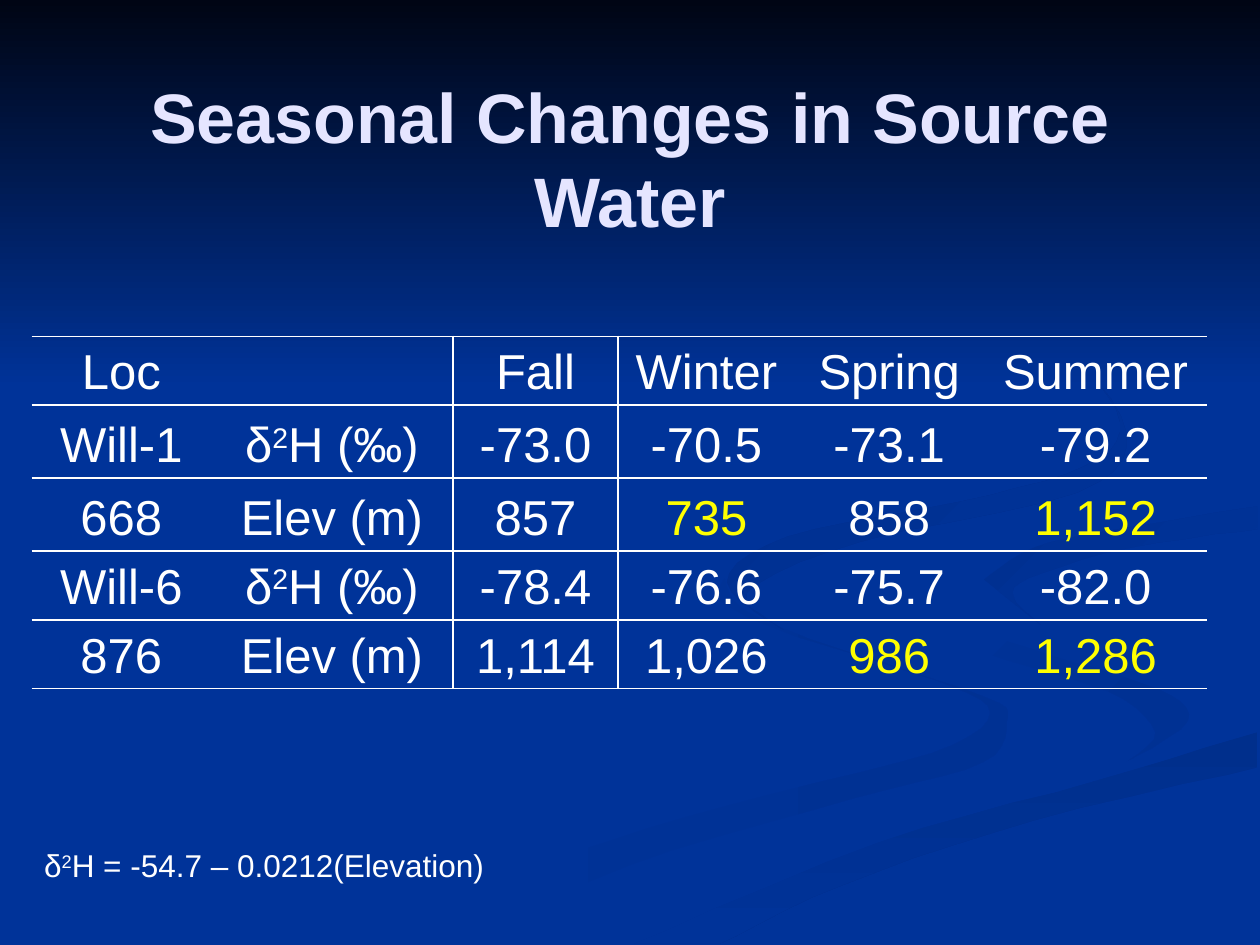
from lxml.etree import SubElement
from pptx import Presentation
from pptx.dml.color import RGBColor
from pptx.enum.shapes import MSO_SHAPE
from pptx.enum.text import MSO_ANCHOR, PP_ALIGN
from pptx.oxml import parse_xml
from pptx.oxml.ns import nsdecls, qn
from pptx.util import Cm, Pt

COLORS = {
    "navy": "003399", "night": "000514", "lavender": "E5E5FF",
    "white": "FFFFFF", "yellow": "FFFF00",
    "shade_soft": "003193", "shade_mid": "003091",
    "shade_deep": "002F8E", "shade_deepest": "002F8C",
}
FONT = "Arial"
NO_STYLE_NO_GRID = "{2D5ABB26-0587-4C30-8999-92F81FD0307C}"
RIBBON_UNIT = Cm(0.0254)
CURVE_STEPS = 5

COLUMN_WIDTHS = [3.61, 4.88, 3.33, 3.56, 3.81, 4.51]
ROW_HEIGHTS = [1.35, 1.47, 1.47, 1.36, 1.36]
ROWS = [
    ["Loc", "", "Fall", "Winter", "Spring", "Summer"],
    ["Will-1", "δ^2^H (‰)", "-73.0", "-70.5", "-73.1", "-79.2"],
    ["668", "Elev (m)", "857", "735", "858", "1,152"],
    ["Will-6", "δ^2^H (‰)", "-78.4", "-76.6", "-75.7", "-82.0"],
    ["876", "Elev (m)", "1,114", "1,026", "986", "1,286"],
]
HIGHLIGHTED = {"735", "1,152", "986", "1,286"}
RULED_BELOW = {0, 2, 4}
LABEL_COLUMNS = 2

# Banks that neighbouring ribbons share
BEND = [(724, 464), (745, 490), (831, 519), (920, 547), (943, 572)]
LOWER_BANK = [(503, 749), (696, 669), (868, 620), (998, 581)]
UPPER_BANK = [(781, 460), (822, 434), (899, 418), (998, 402)]

# Each ribbon: first colour, last colour, clockwise angle, banks in order
RIBBONS = [
    ("navy", "shade_soft", 0, [
        [(575, 459), (587, 481), (642, 507), (781, 553), (799, 573),
         (780, 605), (676, 634), (499, 687), (361, 749)],
        [(300, 749), (417, 690), (579, 639), (739, 598), (786, 566),
         (741, 539), (631, 505), (576, 480), (570, 468)]]),
    ("navy", "shade_soft", 45, [
        BEND + [(894, 605)],
        [(894, 605), (917, 581), (880, 549), (781, 518), (733, 488)]]),
    ("shade_deepest", "navy", 90, [
        LOWER_BANK, [(998, 609), (821, 651), (670, 702), (571, 749)]]),
    ("navy", "navy", 0, [
        BEND + [(892, 605), (743, 643), (573, 703), (477, 749)],
        LOWER_BANK,
        [(998, 538), (904, 519), (804, 485), (781, 460)],
        UPPER_BANK,
        [(998, 387), (851, 411), (742, 439), (724, 464)]]),
    ("shade_mid", "navy", 45, [
        UPPER_BANK,
        [(998, 420), (896, 435), (816, 459), (805, 475), (826, 496)]]),
    ("shade_deep", "navy", 45, [
        [(762, 233), (843, 275), (894, 344), (855, 391), (683, 430),
         (593, 470), (622, 500)],
        [(622, 500), (577, 462), (625, 426), (763, 398), (861, 370),
         (889, 335), (846, 279), (762, 233)]]),
]


def rgb(name):
    return RGBColor.from_string(COLORS[name])


def smooth(bank):
    """Return points of a Catmull-Rom curve through the bank."""
    padded = [bank[0], *bank, bank[-1]]
    points = [bank[0]]
    for knots in zip(padded, padded[1:], padded[2:], padded[3:]):
        for step in range(1, CURVE_STEPS + 1):
            t = step / CURVE_STEPS
            points.append(tuple(
                b + t * (c - a + t * (2 * a - 5 * b + 4 * c - d
                                      + t * (3 * b - a - 3 * c + d))) / 2
                for a, b, c, d in zip(*knots)))
    return points


def paint(shape, first, last, angle):
    shape.shadow.inherit = False
    shape.line.fill.background()
    if first == last:
        shape.fill.solid()
        shape.fill.fore_color.rgb = rgb(first)
        return
    shape.fill.gradient()
    shape.fill.gradient_angle = -angle % 360
    for stop, color in zip(shape.fill.gradient_stops, (first, last)):
        stop.color.rgb = rgb(color)


def add_ribbon(slide, first, last, angle, banks):
    outline = [point for bank in banks for point in smooth(bank)]
    builder = slide.shapes.build_freeform(*outline[0], scale=RIBBON_UNIT)
    builder.add_line_segments(outline[1:], close=True)
    paint(builder.convert_to_shape(), first, last, angle)


def write(paragraph, text, size, color, bold=False):
    """Fill a paragraph; parts between carets become superscripts."""
    for index, part in enumerate(text.split("^")):
        run = paragraph.add_run()
        run.text = part
        if index % 2:
            run.font._element.set("baseline", "30000")
    font = paragraph.font
    font.name, font.size, font.bold = FONT, Pt(size), bold
    font.color.rgb = rgb(color)


def add_text(slide, box, text, size, color, bold=False, wrap=True):
    frame = slide.shapes.add_textbox(*map(Cm, box)).text_frame
    frame.word_wrap = wrap
    write(frame.paragraphs[0], text, size, color, bold)
    return frame


def add_borders(cell, sides):
    properties = cell._tc.get_or_add_tcPr()
    for position, side in enumerate(sides):
        border = parse_xml(f'<a:ln{side} {nsdecls("a")} w="{Pt(1)}"/>')
        fill = SubElement(border, qn("a:solidFill"))
        SubElement(fill, qn("a:srgbClr"), val=COLORS["white"])
        properties.insert(position, border)


def border_sides(row, column):
    ruled = {
        "L": column == LABEL_COLUMNS,
        "R": column == LABEL_COLUMNS - 1,
        "T": row == 0 or row - 1 in RULED_BELOW,
        "B": row in RULED_BELOW,
    }
    return [side for side, present in ruled.items() if present]


def add_season_table(slide):
    table = slide.shapes.add_table(
        len(ROWS), len(COLUMN_WIDTHS), Cm(0.64), Cm(6.78),
        Cm(sum(COLUMN_WIDTHS)), Cm(sum(ROW_HEIGHTS))).table
    table.first_row = table.horz_banding = False
    table._tbl.tblPr.find(qn("a:tableStyleId")).text = NO_STYLE_NO_GRID
    for column, width in zip(table.columns, COLUMN_WIDTHS):
        column.width = Cm(width)
    for row, height in zip(table.rows, ROW_HEIGHTS):
        row.height = Cm(height)
    for r, values in enumerate(ROWS):
        for c, value in enumerate(values):
            cell = table.cell(r, c)
            cell.fill.background()
            cell.vertical_anchor = MSO_ANCHOR.BOTTOM
            cell.margin_top = cell.margin_bottom = Cm(0.1)
            add_borders(cell, border_sides(r, c))
            if value:
                paragraph = cell.text_frame.paragraphs[0]
                paragraph.alignment = PP_ALIGN.CENTER
                write(paragraph, value, 28,
                      "yellow" if value in HIGHLIGHTED else "white")


def main():
    deck = Presentation()
    deck.slide_width, deck.slide_height = Cm(25.4), Cm(19.05)
    slide = deck.slides.add_slide(deck.slide_layouts[6])
    slide.background.fill.solid()
    slide.background.fill.fore_color.rgb = rgb("navy")
    for ribbon in RIBBONS:
        add_ribbon(slide, *ribbon)
    sky = slide.shapes.add_shape(
        MSO_SHAPE.RECTANGLE, 0, 0, deck.slide_width, Cm(7.82))
    paint(sky, "night", "navy", 90)
    title = add_text(slide, (1.27, 1.27, 22.86, 3.81),
                     "Seasonal Changes in Source Water", 40, "lavender", bold=True)
    title.vertical_anchor = MSO_ANCHOR.MIDDLE
    title.paragraphs[0].alignment = PP_ALIGN.CENTER
    add_season_table(slide)
    add_text(slide, (0.64, 16.94, 9.63, 1.02),
             "δ^2^H = -54.7 – 0.0212(Elevation)", 18, "white", wrap=False)
    deck.save("out.pptx")


if __name__ == "__main__":
    main()
